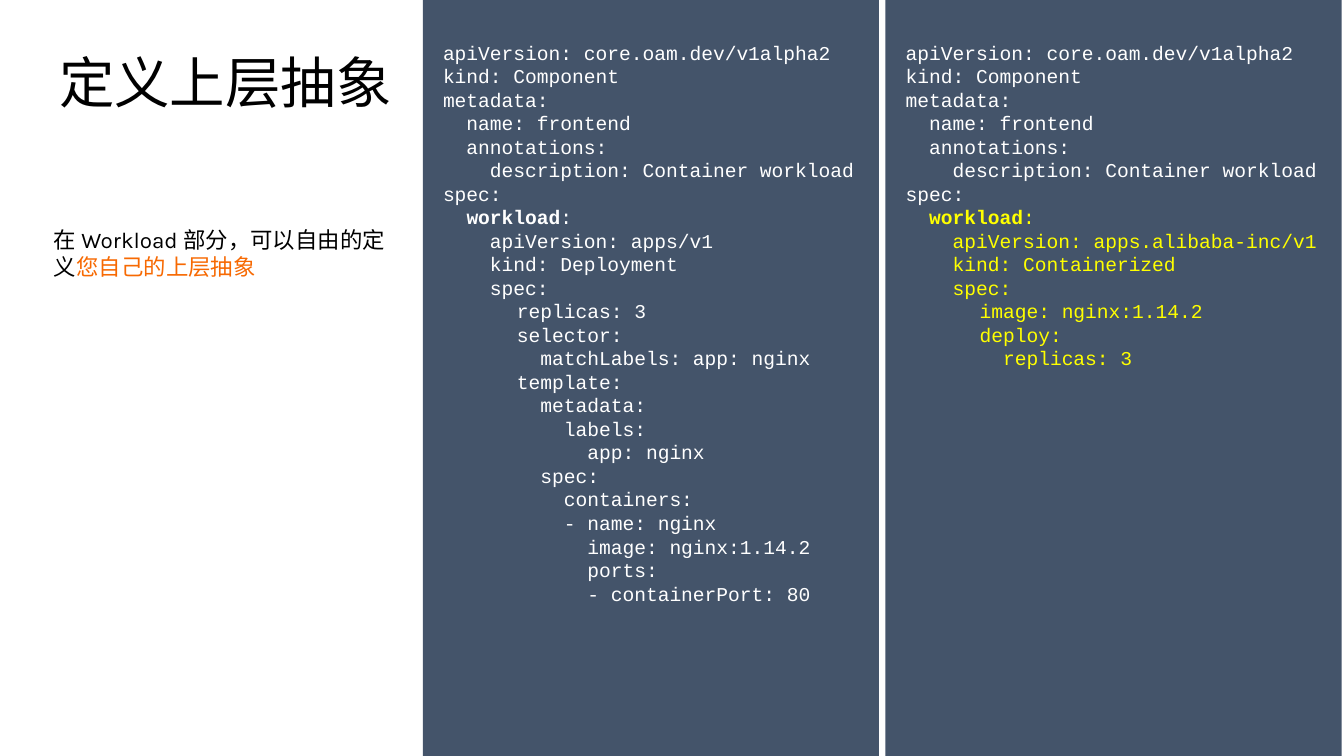
from lxml import etree
from pptx import Presentation
from pptx.dml.color import RGBColor
from pptx.enum.shapes import MSO_SHAPE
from pptx.enum.text import MSO_ANCHOR, MSO_AUTO_SIZE, PP_ALIGN
from pptx.oxml.ns import qn
from pptx.util import Cm, Pt

RECTANGLE = MSO_SHAPE.RECTANGLE
TOP, MIDDLE = MSO_ANCHOR.TOP, MSO_ANCHOR.MIDDLE
FIXED_SIZE = MSO_AUTO_SIZE.NONE
LEFT = PP_ALIGN.LEFT

BLACK, WHITE, SLATE, ORANGE, YELLOW = "000000", "FFFFFF", "44546A", "F76902", "FFFF00"

# Page grid, in centimetres
PAGE_WIDTH, PAGE_HEIGHT = 67.74, 38.1
PANEL_LEFT, PANEL_WIDTH, PANEL_GAP = 21.31, 22.99, 0.33
CODE_TOP = 1.24
NESTED_INDENT = 2.54

TITLE_FONT = {"name": "Calibri", "size": Pt(79.2), "bold": False}
BODY_FONT = {"name": "Karla", "size": Pt(32), "bold": False}
CODE_FONT = {"name": "Courier New", "size": Pt(28), "bold": False}
CODE_MARGINS = {"margin_left": Cm(1.02), "margin_right": Cm(1.02),
                "margin_top": Cm(0.81), "margin_bottom": Cm(0.81)}
NO_MARGINS = dict.fromkeys(CODE_MARGINS, 0)

# Code shared by both panels, then what differs
HEADER = """apiVersion: core.oam.dev/v1alpha2
kind: Component
metadata:
  name: frontend
  annotations:
    description: Container workload
spec:"""

DEPLOYMENT = """    apiVersion: apps/v1
    kind: Deployment
    spec:"""

DEPLOYMENT_DETAILS = """  replicas: 3
  selector:
    matchLabels: app: nginx
  template:
    metadata:
      labels:
        app: nginx
    spec:
      containers:
      - name: nginx
        image: nginx:1.14.2
        ports:
        - containerPort: 80"""

CONTAINERIZED = """    apiVersion: apps.alibaba-inc/v1
    kind: Containerized
    spec:"""

CONTAINERIZED_DETAILS = """  image: nginx:1.14.2
  deploy:
    replicas: 3"""

PANELS = [
    (DEPLOYMENT, DEPLOYMENT_DETAILS, WHITE),
    (CONTAINERIZED, CONTAINERIZED_DETAILS, YELLOW),
]


def color(value):
    return RGBColor.from_string(value)


def set_format(target, values):
    for name, value in values.items():
        setattr(target, name, value)


def place(box, left, top, width, height):
    set_format(box, {"left": Cm(left), "top": Cm(top),
                     "width": Cm(width), "height": Cm(height)})


def add_span(para, text, font, fill, bold=False):
    span = para.add_run()
    span.text = text
    set_format(span.font, {**font, "bold": bold})
    span.font.color.rgb = color(fill)


def add_title(page, text):
    box = page.shapes.title
    place(box, 2.72, 2.79, 61.21, 3.07)
    set_format(box.text_frame, {"auto_size": FIXED_SIZE, "vertical_anchor": MIDDLE})
    para = box.text_frame.paragraphs[0]
    set_format(para, {"alignment": LEFT, "line_spacing": 0.9})
    add_span(para, text, TITLE_FONT, BLACK)


def add_body(page, spans):
    box = page.placeholders[1]
    place(box, 2.72, 11.38, 17.4, 2.74)
    set_format(box.text_frame, {"auto_size": FIXED_SIZE, "vertical_anchor": TOP,
                                **NO_MARGINS})
    para = box.text_frame.paragraphs[0]
    properties = para._p.get_or_add_pPr()
    properties.set("marL", "0")
    properties.set("indent", "0")
    etree.SubElement(properties, qn("a:buNone"))
    set_format(para, {"alignment": LEFT, "space_before": Pt(0)})
    for text, fill in spans:
        add_span(para, text, BODY_FONT, fill)


def add_panel(page, left):
    panel = page.shapes.add_shape(RECTANGLE, Cm(left), 0, Cm(PANEL_WIDTH), Cm(PAGE_HEIGHT))
    panel.shadow.inherit = False
    panel.fill.solid()
    panel.fill.fore_color.rgb = color(SLATE)
    panel.line.fill.background()


def add_code(page, left, workload, details, accent):
    box = page.shapes.add_textbox(Cm(left), Cm(CODE_TOP), Cm(PANEL_WIDTH),
                                  Cm(PAGE_HEIGHT - 2 * CODE_TOP))
    frame = box.text_frame
    set_format(frame, {"word_wrap": True, "auto_size": FIXED_SIZE, **CODE_MARGINS})

    # Each line: its spans as (text, bold), colour and indent
    lines = [([(line, False)], WHITE, 0) for line in HEADER.splitlines()]
    lines.append(([("  ", False), ("workload", True), (":", False)], accent, 0))
    lines += [([(line, False)], accent, 0) for line in workload.splitlines()]
    lines += [([(line, False)], accent, NESTED_INDENT) for line in details.splitlines()]

    for number, (spans, fill, indent) in enumerate(lines):
        para = frame.add_paragraph() if number else frame.paragraphs[0]
        para._p.get_or_add_pPr().set("marL", str(Cm(indent)))
        set_format(para, {"alignment": LEFT, "line_spacing": Pt(33.6)})
        for text, bold in spans:
            add_span(para, text, CODE_FONT, fill, bold)


def main():
    deck = Presentation()
    set_format(deck, {"slide_width": Cm(PAGE_WIDTH), "slide_height": Cm(PAGE_HEIGHT)})
    page = deck.slides.add_slide(deck.slide_layouts[1])

    # Left column
    add_title(page, "定义上层抽象")
    add_body(page, [("在 Workload 部分，可以自由的定义", BLACK), ("您自己的上层抽象", ORANGE)])

    # Code panels
    for column, (workload, details, accent) in enumerate(PANELS):
        left = PANEL_LEFT + column * (PANEL_WIDTH + PANEL_GAP)
        add_panel(page, left)
        add_code(page, left, workload, details, accent)

    deck.save("out.pptx")


if __name__ == "__main__":
    main()
